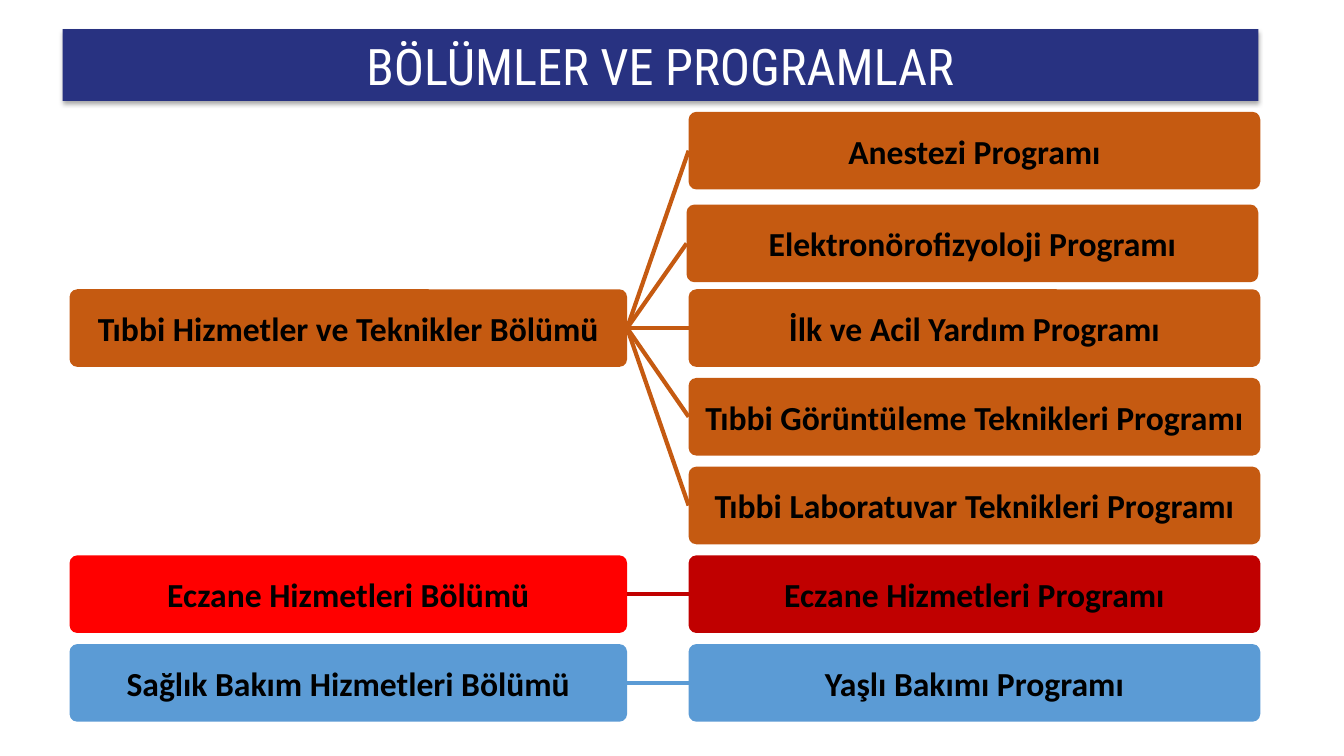
from lxml import etree
from pptx import Presentation
from pptx.dml.color import RGBColor
from pptx.enum.shapes import MSO_CONNECTOR, MSO_SHAPE
from pptx.enum.text import MSO_ANCHOR, MSO_AUTO_SIZE, PP_ALIGN
from pptx.oxml import parse_xml
from pptx.oxml.ns import nsdecls, qn
from pptx.util import Inches, Pt

ROUNDED, STRAIGHT = MSO_SHAPE.ROUNDED_RECTANGLE, MSO_CONNECTOR.STRAIGHT
CENTER, MIDDLE, NO_FIT = PP_ALIGN.CENTER, MSO_ANCHOR.MIDDLE, MSO_AUTO_SIZE.NONE
RIGHT_SIDE, LEFT_SIDE = 3, 1

THEME = {
    "navy": "283281", "orange": "C55A11", "red": "FF0000",
    "dark_red": "C00000", "blue": "5B9BD5",
    "title": {"name": "Roboto Condensed", "size": Pt(36), "bold": False},
    "title_color": "FFFFFF",
    "label": {"name": "Calibri", "size": Pt(24), "bold": True},
    "label_color": "000000",
    "line": Pt(3),
}

# Grid: left and width of each column, top and pitch of the rows
DEPARTMENT_COL, PROGRAM_COL = (0.69, 5.53), (6.83, 5.67)
TOP, PITCH, BOX_H = 1.11, 0.88, 0.77

# Department, its row, box colour, program colour, programs with (x, y) nudge
DEPARTMENTS = [
    ("Tıbbi Hizmetler ve Teknikler Bölümü", 2, "orange", "orange", [
        ("Anestezi Programı", 0, 0),
        ("Elektronörofizyoloji Programı", -0.02, 0.04),
        ("İlk ve Acil Yardım Programı", 0, 0),
        ("Tıbbi Görüntüleme Teknikleri Programı", 0, 0),
        ("Tıbbi Laboratuvar Teknikleri Programı", 0, 0)]),
    ("Eczane Hizmetleri Bölümü", 5, "red", "dark_red", [
        ("Eczane Hizmetleri Programı", 0, 0)]),
    ("Sağlık Bakım Hizmetleri Bölümü", 6, "blue", "blue", [
        ("Yaşlı Bakımı Programı", 0, 0)]),
]


def write(sp, text, style, inset):
    tf = sp.text_frame
    tf.word_wrap, tf.auto_size, tf.vertical_anchor = True, NO_FIT, MIDDLE
    for side in ("left", "top", "right", "bottom"):
        setattr(tf, f"margin_{side}", Inches(inset))
    p = tf.paragraphs[0]
    p.alignment = CENTER
    r = p.add_run()
    r.text = text
    for name, value in THEME[style].items():
        setattr(r.font, name, value)
    r.font.color.rgb = RGBColor.from_string(THEME[f"{style}_color"])


def add_box(text, column, row, color, dx=0, dy=0):
    left, width = column
    sp = s.shapes.add_shape(ROUNDED, Inches(left + dx), Inches(TOP + row * PITCH + dy),
                            Inches(width), Inches(BOX_H))
    sp.adjustments[0] = 0.1
    sp.shadow.inherit = False
    sp.fill.solid()
    sp.fill.fore_color.rgb = RGBColor.from_string(THEME[color])
    sp.line.fill.background()
    write(sp, text, "label", 0.05)
    return sp


prs = Presentation()
prs.slide_width, prs.slide_height = Inches(13.33), Inches(7.5)
s = prs.slides.add_slide(prs.slide_layouts[5])

# Title band with a soft shadow below
title = s.shapes.title
title.left, title.top = Inches(0.62), Inches(0.29)
title.width, title.height = Inches(11.86), Inches(0.71)
title.fill.solid()
title.fill.fore_color.rgb = RGBColor.from_string(THEME["navy"])
write(title, "BÖLÜMLER VE PROGRAMLAR", "title", 0.05)
title._element.spPr.append(parse_xml(
    f'<a:effectLst {nsdecls("a")}><a:outerShdw blurRad="{Pt(3.5)}" dist="{Pt(2.2)}" '
    'dir="5400000" algn="t" rotWithShape="0"><a:srgbClr val="000000">'
    '<a:alpha val="32000"/></a:srgbClr></a:outerShdw></a:effectLst>'))

# Departments, each joined to its programs
program_row = 0
for name, row, color, program_color, programs in DEPARTMENTS:
    department = add_box(name, DEPARTMENT_COL, row, color)
    for program_name, dx, dy in programs:
        program = add_box(program_name, PROGRAM_COL, program_row, program_color, dx, dy)
        link = s.shapes.add_connector(STRAIGHT, 0, 0, 0, 0)
        link.begin_connect(department, RIGHT_SIDE)
        link.end_connect(program, LEFT_SIDE)
        link.line.color.rgb = RGBColor.from_string(THEME[program_color])
        link.line.width = THEME["line"]
        etree.SubElement(link._element.spPr, qn("a:effectLst"))
        program_row += 1

prs.save("out.pptx")
